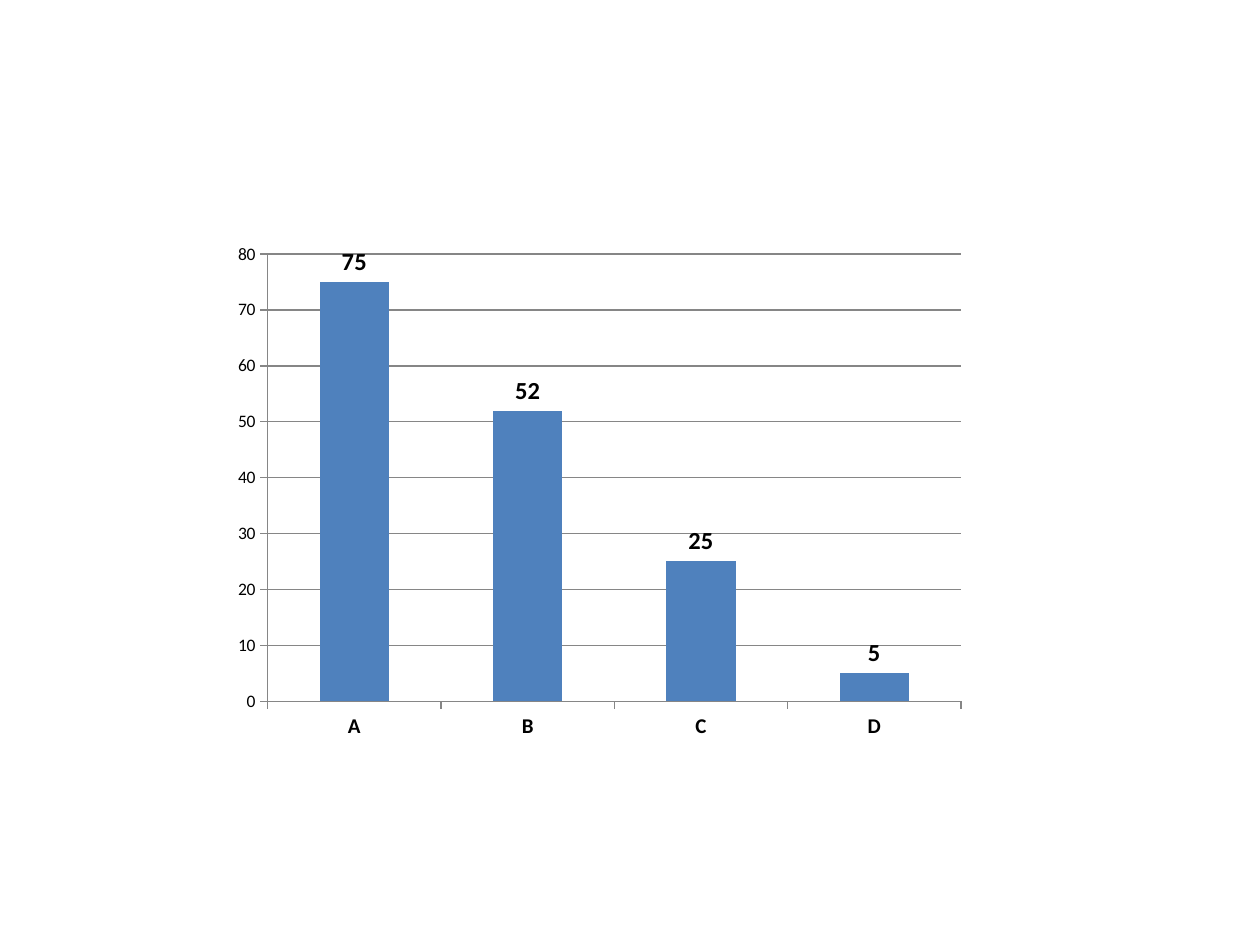
import pptx
import pptx.chart.data
import pptx.dml.color
import pptx.enum.chart
import pptx.util

CATEGORIES = ["A", "B", "C", "D"]
SERIES_NAME = "Series 1"
VALUES = [75, 52, 25, 5]
SLIDE = (1260, 945)
CHART_BOX = (223, 234, 753, 515)
BLANK_LAYOUT = 6
BAR = "4F81BD"
TEXT = "000000"
GRID = "868686"


def px(length):
    return pptx.util.Emu(length * 914400 // 126)


def color(value):
    return pptx.dml.color.RGBColor.from_string(value)


def style_font(font, size, bold=False):
    font.name = "Calibri"
    font.size = pptx.util.Pt(size)
    font.bold = bold
    font.color.rgb = color(TEXT)


def style_line(line):
    line.color.rgb = color(GRID)
    line.width = pptx.util.Pt(0.75)


def style_axis(axis, size, bold=False):
    axis.major_tick_mark = pptx.enum.chart.XL_TICK_MARK.OUTSIDE
    axis.minor_tick_mark = pptx.enum.chart.XL_TICK_MARK.NONE
    style_line(axis.format.line)
    style_font(axis.tick_labels.font, size, bold)


def add_bars(slide):
    data = pptx.chart.data.CategoryChartData()
    data.categories = CATEGORIES
    data.add_series(SERIES_NAME, VALUES)
    chart = slide.shapes.add_chart(
        pptx.enum.chart.XL_CHART_TYPE.COLUMN_CLUSTERED, *map(px, CHART_BOX), data
    ).chart
    chart.has_legend = False
    chart.has_title = False
    style_font(chart.font, 10)

    style_axis(chart.category_axis, 12, True)
    scale = chart.value_axis
    style_axis(scale, 10)
    scale.minimum_scale, scale.maximum_scale, scale.major_unit = 0, 80, 10
    scale.has_major_gridlines = True
    style_line(scale.major_gridlines.format.line)

    plot = chart.plots[0]
    plot.gap_width = 150
    plot.vary_by_categories = False
    bars = plot.series[0]
    bars.format.fill.solid()
    bars.format.fill.fore_color.rgb = color(BAR)
    labels = bars.data_labels
    labels.show_value = True
    labels.position = pptx.enum.chart.XL_LABEL_POSITION.OUTSIDE_END
    style_font(labels.font, 14, True)


def main():
    deck = pptx.Presentation()
    deck.slide_width, deck.slide_height = map(px, SLIDE)
    add_bars(deck.slides.add_slide(deck.slide_layouts[BLANK_LAYOUT]))
    deck.save("out.pptx")


if __name__ == "__main__":
    main()
